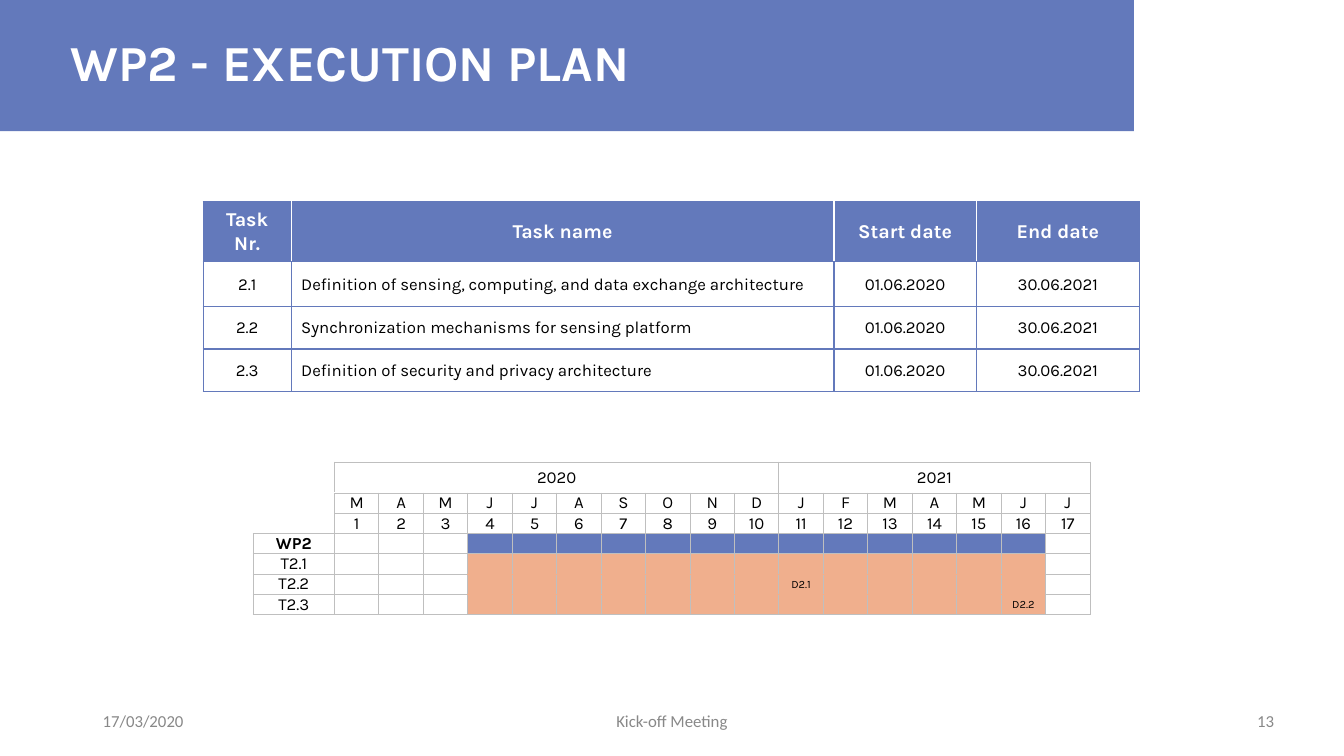
"""Build the WP2 execution plan slide with its task table and timeline."""
from lxml import etree
from pptx import Presentation
from pptx.dml.color import RGBColor
from pptx.enum.shapes import MSO_SHAPE
from pptx.enum.text import MSO_ANCHOR, PP_ALIGN
from pptx.oxml.ns import qn
from pptx.util import Pt

LEFT, MID, RIGHT = PP_ALIGN.LEFT, PP_ALIGN.CENTER, PP_ALIGN.RIGHT
CENTRE = MSO_ANCHOR.MIDDLE
RECT = MSO_SHAPE.RECTANGLE
BLUE, PEACH, WHITE, BLACK = "6379BB", "F0AF8D", "FFFFFF", "000000"
GREY, SILVER = "888888", "BFBFBF"

TITLE = "WP2 - EXECUTION PLAN"
FOOTER = [
    ("17/03/2020", 66.2, 216, LEFT),
    ("Kick-off Meeting", 318, 324, MID),
    ("13", 701.3, 216, RIGHT),
]
TASKS = [
    ("Task Nr.", "Task name", "Start date", "End date"),
    ("2.1", "Definition of sensing, computing, and data exchange architecture",
     "01.06.2020", "30.06.2021"),
    ("2.2", "Synchronization mechanisms for sensing platform",
     "01.06.2020", "30.06.2021"),
    ("2.3", "Definition of security and privacy architecture",
     "01.06.2020", "30.06.2021"),
]
MONTHS = "MAMJJASONDJFMAMJJ"
YEARS = [("2020", 1, 10), ("2021", 11, 17)]
PLANS = ["WP2", "T2.1", "T2.2", "T2.3"]
START, END = 4, 16
DUE = {("T2.2", 11): "D2.1", ("T2.3", 16): "D2.2"}


def color(code):
    return RGBColor.from_string(code)


def write(frame, text, size, tint, align, font="Karla", bold=False, gap=None):
    para = frame.paragraphs[0]
    para.text = text
    para.alignment = align
    if gap:
        para.line_spacing = gap
    face = para.font
    face.name, face.size, face.bold = font, Pt(size), bold
    face.color.rgb = color(tint)


def label(slide, box, text, *style, **more):
    frame = slide.shapes.add_textbox(*map(Pt, box)).text_frame
    frame.word_wrap = True
    frame.vertical_anchor = CENTRE
    write(frame, text, *style, **more)


def grid(slide, left, top, widths, heights):
    table = slide.shapes.add_table(
        len(heights), len(widths), Pt(left), Pt(top),
        Pt(sum(widths)), Pt(sum(heights))).table
    table.first_row = table.horz_banding = False
    for col, width in zip(table.columns, widths):
        col.width = Pt(width)
    for row, height in zip(table.rows, heights):
        row.height = Pt(height)
    return table


def dress(cell, paint, edges, weight, side):
    """Set the fill, borders and margins of a cell; edges maps L, R, T, B to colours."""
    cell.vertical_anchor = CENTRE
    cell.margin_left = cell.margin_right = Pt(side)
    cell.margin_top = cell.margin_bottom = 0
    props = cell._tc.get_or_add_tcPr()
    for edge in "LRTB":
        if edge in edges:
            line = etree.SubElement(props, qn("a:ln" + edge), w=str(Pt(weight)))
            solid = etree.SubElement(line, qn("a:solidFill"))
            etree.SubElement(solid, qn("a:srgbClr"), val=edges[edge])
    if paint:
        cell.fill.solid()
        cell.fill.fore_color.rgb = color(paint)
    else:
        cell.fill.background()


def tasks(slide):
    table = grid(slide, 145.2, 144, [62.8, 387.8, 101.5, 116.8],
                 [43, 32, 30.3, 30.7])
    for r, row in enumerate(TASKS):
        head = r == 0
        for c, text in enumerate(row):
            edges = dict.fromkeys("LRTB", BLUE)
            if head and c > 0:
                edges["L"] = WHITE
            if head and c < len(row) - 1:
                edges["R"] = WHITE
            cell = table.cell(r, c)
            dress(cell, BLUE if head else WHITE, edges, 1, 7.2)
            write(cell.text_frame, text, 14 if head else 12,
                  WHITE if head else BLACK,
                  LEFT if c == 1 and not head else MID, bold=head, gap=1.04)


def plan(slide):
    count = len(MONTHS)
    table = grid(slide, 180.9, 330, [58] + [31.77] * count, [22.2] + [14.5] * 6)
    rows = [[""] * (count + 1), ["", *MONTHS],
            ["", *map(str, range(1, count + 1))]]
    for year, first, _ in YEARS:
        rows[0][first] = year
    for name in PLANS:
        rows.append([name] + [DUE.get((name, m), "") for m in range(1, count + 1)])
    for r, row in enumerate(rows):
        for c, text in enumerate(row):
            edges = dict.fromkeys("LRTB", SILVER)
            paint = None
            if c == 0 and r < 3:
                edges = {"R": SILVER}
                if r == 2:
                    edges["B"] = SILVER
            elif r >= 3 and START <= c <= END:
                paint = BLUE if r == 3 else PEACH
                if r > 4:
                    edges["T"] = PEACH
                if 3 < r < len(rows) - 1:
                    edges["B"] = PEACH
            cell = table.cell(r, c)
            dress(cell, paint, edges, 0.75, 0.7)
            due = r >= 3 and c > 0
            write(cell.text_frame, text, 8 if due else 12, BLACK, MID,
                  bold=text == "WP2")
    for _, first, last in YEARS:
        table.cell(0, first).merge(table.cell(0, last))


def main():
    deck = Presentation()
    deck.slide_width, deck.slide_height = Pt(960), Pt(540)
    slide = deck.slides.add_slide(deck.slide_layouts[6])
    band = slide.shapes.add_shape(RECT, Pt(-0.7), Pt(-0.7), Pt(810.7), Pt(94.3))
    band.shadow.inherit = False
    band.fill.solid()
    band.fill.fore_color.rgb = color(BLUE)
    band.line.fill.background()
    for text, left, width, align in FOOTER:
        label(slide, (left, 500.5, width, 28.8), text, 12, GREY, align,
              font="Calibri")
    label(slide, (43.2, 26, 766.8, 41), TITLE, 36, WHITE, LEFT,
          bold=True, gap=0.9)
    tasks(slide)
    plan(slide)
    deck.save("out.pptx")


if __name__ == "__main__":
    main()
